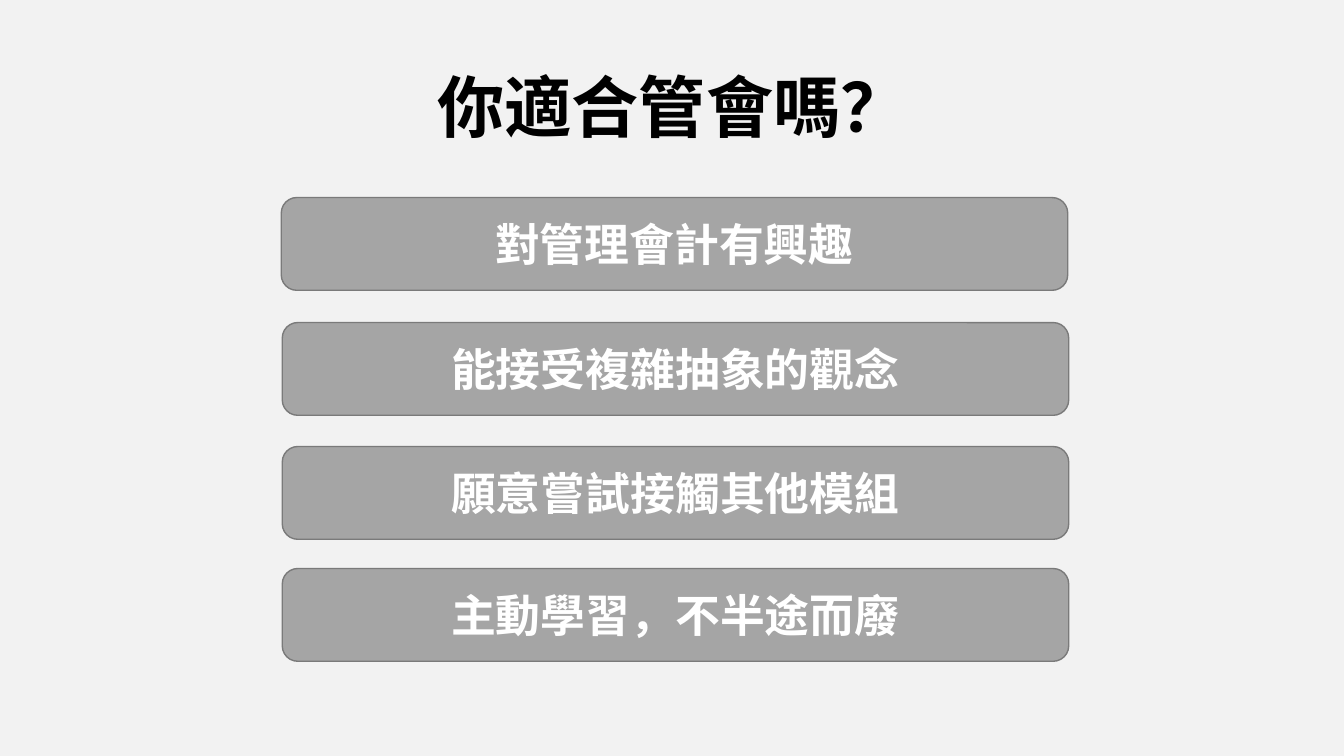
from pptx import Presentation
from pptx.dml.color import RGBColor
from pptx.enum.shapes import MSO_SHAPE as Preset
from pptx.enum.text import MSO_ANCHOR as Anchor, PP_ALIGN as Align
from pptx.oxml.ns import qn
from pptx.util import Emu, Pt
from lxml.etree import SubElement

PX = 9144  # 100 px to the inch
FONT = "Noto Sans CJK SC"
BAR_WIDTH, BAR_HEIGHT = 780, 92
TRAITS = [
    (279, 196, "對管理會計有興趣"),
    (280, 320, "能接受複雜抽象的觀念"),
    (280, 443, "願意嘗試接觸其他模組"),
    (280, 564, "主動學習，不半途而廢"),
]


def px(*lengths):
    return [Emu(length * PX) for length in lengths]


def paint(color_format, color):
    color_format.rgb = RGBColor.from_string(color)


def write_text(shape, text, size, color):
    """Put one bold, centred line into a shape."""
    frame = shape.text_frame
    frame.text = text
    frame.word_wrap = True
    frame.vertical_anchor = Anchor.MIDDLE
    para = frame.paragraphs[0]
    para.alignment = Align.CENTER
    span = para.runs[0]
    span.font.name = FONT
    span.font.size = Pt(size)
    span.font.bold = True
    paint(span.font.color, color)
    # East Asian characters take their own typeface
    SubElement(span.font._element, qn("a:ea"), typeface=FONT)
    return para


def add_title(page, text):
    box = page.shapes.add_textbox(*px(92, 37, 1150, 145))
    para = write_text(box, text, 48, "000000")
    para.line_spacing = 0.9


def add_bar(page, left, top, text):
    bar = page.shapes.add_shape(
        Preset.ROUNDED_RECTANGLE, *px(left, top, BAR_WIDTH, BAR_HEIGHT))
    bar.shadow.inherit = False
    bar.fill.solid()
    paint(bar.fill.fore_color, "A5A5A5")
    paint(bar.line.color, "7A7A7A")
    bar.line.width = Pt(1)
    write_text(bar, text, 32, "FFFFFF")


def main():
    deck = Presentation()
    deck.slide_width, deck.slide_height = px(1333, 750)
    page = deck.slides.add_slide(deck.slide_layouts[6])

    # Background
    page.background.fill.solid()
    paint(page.background.fill.fore_color, "F2F2F2")

    # Traits, then the heading
    for left, top, text in TRAITS:
        add_bar(page, left, top, text)
    add_title(page, "你適合管會嗎？")

    deck.save("out.pptx")


if __name__ == "__main__":
    main()
